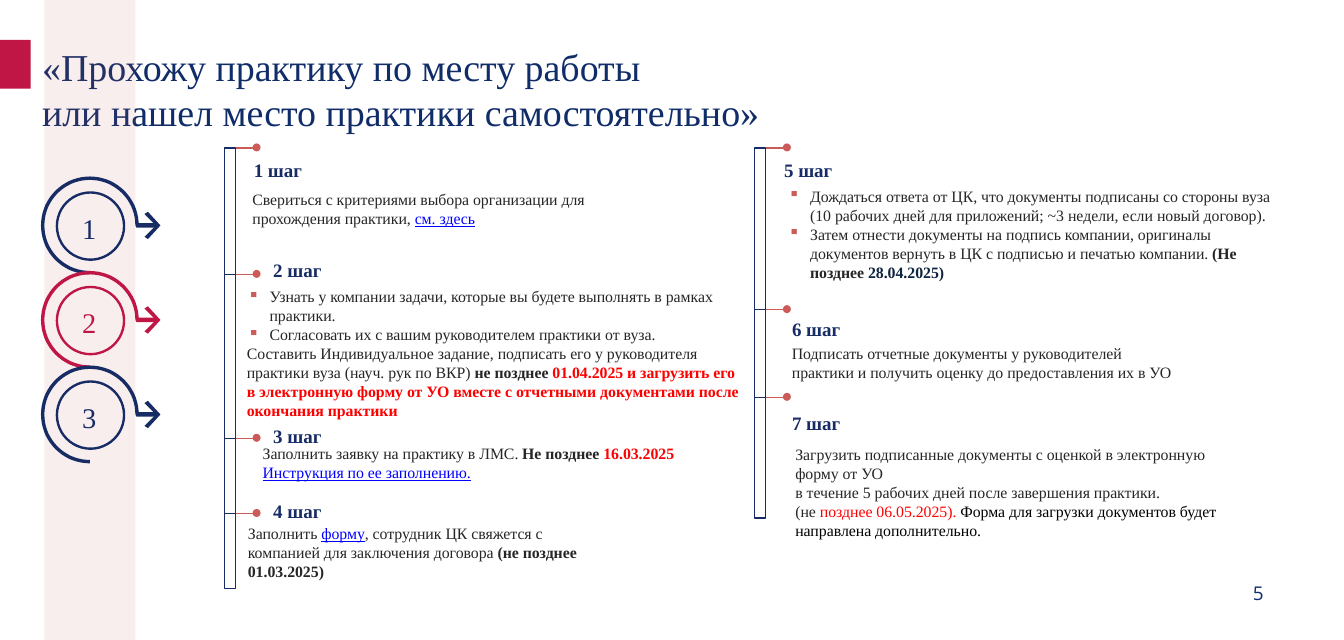
"""Builds the slide on arranging an internship by oneself, in seven steps."""
import math
import pptx
import pptx.util
import pptx.dml.color
import pptx.enum.shapes
import pptx.enum.text
import pptx.oxml
import pptx.oxml.ns
from dataclasses import dataclass

Inches = pptx.util.Inches
SHAPE = pptx.enum.shapes.MSO_SHAPE


@dataclass(frozen=True)
class Theme:
    serif: str = "Times New Roman"
    sans: str = "Open Sans"
    navy: str = "172C65"
    ink: str = "102D69"
    wine: str = "C01646"
    coral: str = "CB5B59"
    grey: str = "262626"
    red: str = "FF0000"
    link: str = "0000FF"
    dark: str = "0F243E"
    black: str = "000000"
    big: int = 24
    digit: int = 18
    head: int = 12
    body: int = 10


T = Theme()
STYLES = {
    "plain": (T.grey, False, False), "bold": (T.grey, True, False),
    "alert": (T.red, True, False), "red": (T.red, False, False),
    "link": (T.link, False, True), "dark": (T.dark, True, False),
    "black": (T.black, False, False),
}
TITLE = ["«Прохожу практику по месту работы",
         "или нашел место практики самостоятельно»"]
RINGS = [("1", T.navy), ("2", T.wine), ("3", T.navy)]
RAILS = [(1.97, [1.3, 2.41, 3.85, 4.51, 5.17]), (6.63, [1.3, 2.72, 3.49, 4.55])]
STEPS = [
    ("1 шаг", (2.22, 1.38), (2.11, 1.62, 3.2, 0.44), 0, [
        [("Свериться с критериями выбора организации для прохождения практики, ", "plain"),
         ("см. здесь", "link")]]),
    ("2 шаг", (2.39, 2.26), (2.07, 2.47, 4.59, 1.33), 2, [
        [("Узнать у компании задачи, которые вы будете выполнять в рамках практики.", "plain")],
        [("Согласовать их с вашим руководителем практики от вуза.", "plain")],
        [("Составить Индивидуальное задание, подписать его у руководителя "
          "практики вуза (науч. рук по ВКР) ", "plain"),
         ("не позднее ", "bold"),
         ("01.04.2025 и загрузить его в электронную форму от УО вместе "
          "с отчетными документами после окончания практики", "alert")]]),
    ("3 шаг", (2.39, 3.72), (2.2, 3.85, 4.2, 0.44), 0, [
        [("Заполнить заявку на практику в ЛМС. ", "plain"),
         ("Не позднее ", "bold"), ("16.03.2025", "alert")],
        [("Инструкция по ее заполнению.", "link")]]),
    ("4 шаг", (2.39, 4.38), (2.07, 4.55, 3.22, 0.61), 0, [
        [("Заполнить ", "plain"), ("форму", "link"),
         (", сотрудник ЦК свяжется с компанией для заключения договора ", "plain"),
         ("(не позднее 01.03.2025)", "bold")]]),
    ("5 шаг", (6.88, 1.38), (6.82, 1.59, 4.59, 0.94), 2, [
        [("Дождаться ответа от ЦК, что документы подписаны со стороны вуза "
          "(10 рабочих дней для приложений; ~3 недели, если новый договор).", "plain")],
        [("Затем отнести документы на подпись компании, оригиналы документов "
          "вернуть в ЦК с подписью и печатью компании. ", "plain"),
         ("(Не позднее ", "bold"), ("28.04.2025)", "dark")]]),
    ("6 шаг", (6.95, 2.78), (6.85, 2.97, 3.61, 0.44), 0, [
        [("Подписать отчетные документы у руководителей практики "
          "и получить оценку до предоставления их в УО", "plain")]]),
    ("7 шаг", (6.95, 3.6), (6.88, 3.86, 4.11, 0.94), 0, [
        [("Загрузить подписанные документы с оценкой в электронную форму от УО", "plain")],
        [("в течение 5 рабочих дней после завершения практики.", "plain")],
        [("(не ", "plain"), ("позднее 06.05.2025). ", "red"),
         ("Форма для загрузки документов будет направлена дополнительно.", "black")]]),
]


def rgb(code):
    return pptx.dml.color.RGBColor.from_string(code)


def paint(shape, fill=None, line=None, width=0.75):
    shape.shadow.inherit = False
    if fill:
        shape.fill.solid()
        shape.fill.fore_color.rgb = rgb(fill)
    else:
        shape.fill.background()
    if line:
        shape.line.color.rgb = rgb(line)
        shape.line.width = pptx.util.Pt(width)
    else:
        shape.line.fill.background()
    return shape


def add(slide, kind, place, **look):
    return paint(slide.shapes.add_shape(kind, *map(Inches, place)), **look)


def style(run, size, color, bold=False, under=False, face=T.serif):
    font = run.font
    font.name, font.size, font.bold = face, pptx.util.Pt(size), bold
    font.underline = under
    font.color.rgb = rgb(color)


def frame(slide, place, inset=(0, 0.01, 0, 0), wrap=True):
    box = slide.shapes.add_textbox(*map(Inches, place)).text_frame
    box.word_wrap = wrap
    box.margin_left, box.margin_top, box.margin_right, box.margin_bottom = map(Inches, inset)
    return box


def indent(par, left, first=0, mark=None):
    props = par._p.get_or_add_pPr()
    props.set("marL", str(Inches(left)))
    props.set("indent", str(Inches(first)))
    if mark:
        ns = pptx.oxml.ns.nsdecls("a")
        for xml in (f'<a:buClr {ns}><a:srgbClr val="{T.coral}"/></a:buClr>',
                    f'<a:buChar {ns} char="{mark}"/>'):
            props.append(pptx.oxml.parse_xml(xml))


def label(slide, place, text, size, color, bold=False, face=T.serif, left=0.01, **box):
    words = frame(slide, place, **box)
    words.text = text
    for par in words.paragraphs:
        indent(par, left)
        style(par.runs[0], size, color, bold, face=face)
    return words


def outline(slide, points, color):
    grain = 1000
    dots = [(x * grain, y * grain) for x, y in points]
    pen = slide.shapes.build_freeform(*dots[0], scale=Inches(1) / grain)
    pen.add_line_segments(dots[1:], close=True)
    paint(pen.convert_to_shape(), fill=color)


def ring(slide, mid, digit, color):
    x, y, half = 0.79, mid, 0.02
    add(slide, SHAPE.OVAL, (x - 0.29, y - 0.29, 0.59, 0.59), line=color, width=1.5)
    turn = [math.radians(a) for a in range(90, 361, 5)]
    outer, inner = [[(x + r * math.cos(a), y + r * math.sin(a)) for a in turn]
                    for r in (0.43, 0.4)]
    stem = [(1.22, y - half), (1.37, y - half), (1.37, y + half), (1.2, y + half)]
    outline(slide, outer[:-1] + stem + inner[::-1], color)
    upper = [(1.37, y), (1.27, y - 0.1), (1.3, y - 0.12), (1.41, y)]
    lower = [(px, 2 * y - py) for px, py in upper[-2:0:-1]]
    outline(slide, upper + lower, color)
    words = label(slide, (0.57, y - 0.14, 0.42, 0.34), digit, T.digit, color)
    words.paragraphs[0].alignment = pptx.enum.text.PP_ALIGN.CENTER


def rail(slide, left, stops):
    for top, end in zip(stops, stops[1:]):
        ends = map(Inches, (left, top, left + 0.29, top))
        tick = slide.shapes.add_connector(pptx.enum.shapes.MSO_CONNECTOR.STRAIGHT, *ends)
        tick.line.color.rgb = rgb(T.coral)
        tick.line.width = pptx.util.Pt(0.75)
        blank = f'<a:effectLst {pptx.oxml.ns.nsdecls("a")}/>'
        tick._element.spPr.append(pptx.oxml.parse_xml(blank))
        add(slide, SHAPE.OVAL, (left + 0.25, top - 0.04, 0.07, 0.07), fill=T.coral)
        add(slide, SHAPE.RECTANGLE, (left, top, 0.1, end - top), line=T.navy)


def step(slide, head, spot, place, marks, pars):
    label(slide, (*spot, 0.61, 0.22), head, T.head, T.navy, bold=True)
    words = frame(slide, place, (0.1, 0.05, 0.1, 0.05))
    for i, runs in enumerate(pars):
        par = words.add_paragraph() if i else words.paragraphs[0]
        indent(par, *((0.2, -0.19, "▪") if i < marks else (0 if marks else 0.01,)))
        for text, look in runs:
            run = par.add_run()
            run.text = text
            style(run, T.body, *STYLES[look])


def main():
    deck = pptx.Presentation()
    deck.slide_width, deck.slide_height = Inches(11.81), Inches(5.62)
    slide = deck.slides.add_slide(deck.slide_layouts[6])
    label(slide, (0.36, 0.37, 11.4, 0.82), "\n".join(TITLE), T.big, T.ink)
    stripe = add(slide, SHAPE.RECTANGLE, (0.39, 0, 0.8, 5.62), fill=T.coral)
    tint = stripe._element.spPr.find(".//" + pptx.oxml.ns.qn("a:srgbClr"))
    tint.append(pptx.oxml.parse_xml(f'<a:alpha {pptx.oxml.ns.nsdecls("a")} val="10000"/>'))
    add(slide, SHAPE.RECTANGLE, (0, 0.35, 0.27, 0.43), fill=T.wine)
    for i, (digit, color) in enumerate(RINGS):
        ring(slide, 1.98 + 0.83 * i, digit, color)
    for left, stops in RAILS:
        rail(slide, left, stops)
    for item in STEPS:
        step(slide, *item)
    label(slide, (10.98, 5.11, 0.12, 0.15), "5", T.head, T.ink, face=T.sans,
          left=0.03, inset=(0, 0, 0, 0), wrap=False)
    deck.save("out.pptx")


if __name__ == "__main__":
    main()
